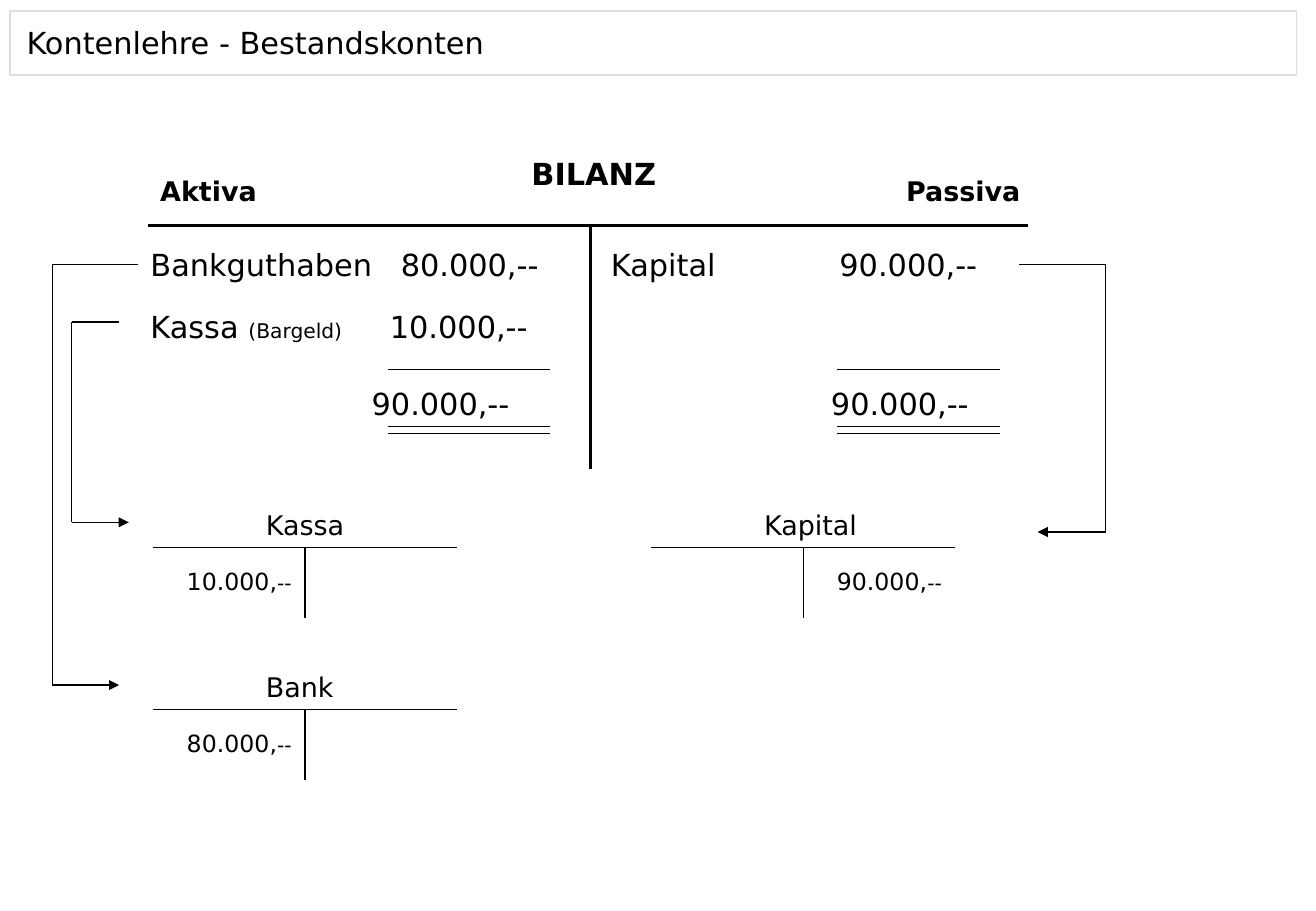
from dataclasses import dataclass

from lxml import etree
from pptx import Presentation
from pptx import util as u
from pptx.dml.color import RGBColor
from pptx.enum import shapes, text
from pptx.oxml import ns

PX = 9144
FONT = "DejaVu Sans"
BLACK, WHITE, GREY = "000000", "FFFFFF", "DDDDDD"
LEFT, CENTER, RIGHT = text.PP_ALIGN.LEFT, text.PP_ALIGN.CENTER, text.PP_ALIGN.RIGHT


@dataclass
class Heading:
    label: str
    x: int
    y: int
    w: int
    size: int
    align: text.PP_ALIGN = LEFT


@dataclass
class Entry:
    pieces: list[tuple[str, int]]
    x: int
    y: int
    h: int
    tab: int


@dataclass
class Account:
    name: str
    amount: str
    x: int
    y: int
    name_w: int
    amount_dx: int


@dataclass
class Route:
    start_x: int
    start_y: int
    turn_x: int
    end_x: int
    end_y: int


HEADINGS = [
    Heading("BILANZ ", 374, 123, 238, 18, CENTER),
    Heading("Aktiva", 122, 139, 112, 16),
    Heading("Passiva", 736, 139, 154, 16),
]
ENTRIES = [
    Entry([("Bankguthaben\t80.000,--", 18)], 114, 198, 51, 206),
    Entry([("Kassa ", 18), ("(Bargeld)", 12), ("\t10.000,--", 18)], 114, 249, 47, 197),
    Entry([("Kapital\t90.000,--", 18)], 493, 198, 51, 188),
    Entry([("\t90.000,--", 18)], 114, 312, 51, 182),
    Entry([("\t90.000,--", 18)], 492, 312, 51, 182),
]
ACCOUNTS = [
    Account("Kassa", "10.000,", 126, 451, 88, 12),
    Account("Bank", "80.000,", 126, 584, 88, 12),
    Account("Kapital", "90.000,", 536, 451, 126, 137),
]
ROUTES = [
    Route(114, 218, 43, 98, 564),
    Route(98, 265, 59, 106, 430),
    Route(839, 218, 910, 854, 438),
]

prs = Presentation()
prs.slide_width, prs.slide_height = 1083 * PX, 750 * PX
s = prs.slides.add_slide(prs.slide_layouts[6])


def rgb(color: str) -> RGBColor:
    return RGBColor.from_string(color)


def write(tf, pieces: list[tuple[str, int]], *, bold: bool = False,
          align: text.PP_ALIGN = LEFT, tab: int = 0) -> None:
    tf.word_wrap = True
    tf.vertical_anchor = text.MSO_ANCHOR.TOP
    p = tf.paragraphs[0]
    p.alignment = align
    if tab:
        tabs = etree.SubElement(p._p.get_or_add_pPr(), ns.qn("a:tabLst"))
        etree.SubElement(tabs, ns.qn("a:tab"), pos=str(tab * PX), algn="l")
    for content, size in pieces:
        r = p.add_run()
        r.text = content
        r.font.name, r.font.size, r.font.bold = FONT, u.Pt(size), bold
        r.font.color.rgb = rgb(BLACK)


def rect(x: int, y: int, w: int, h: int):
    sp = s.shapes.add_shape(shapes.MSO_SHAPE.RECTANGLE, x * PX, y * PX, w * PX, h * PX)
    sp.shadow.inherit = False
    return sp


def label(x: int, y: int, w: int, h: int, pieces: list[tuple[str, int]], **fmt) -> None:
    sp = rect(x, y, w, h)
    sp.fill.solid()
    sp.fill.fore_color.rgb = rgb(WHITE)
    sp.line.fill.background()
    write(sp.text_frame, pieces, **fmt)


def line(x1: int, y1: int, x2: int, y2: int, width: float = 0.75, arrow: bool = False) -> None:
    c = s.shapes.add_connector(shapes.MSO_CONNECTOR.STRAIGHT, x1 * PX, y1 * PX, x2 * PX, y2 * PX)
    c.line.color.rgb = rgb(BLACK)
    c.line.width = u.Pt(width)
    if arrow:
        etree.SubElement(c.line._get_or_add_ln(), ns.qn("a:tailEnd"), type="triangle")
    etree.SubElement(c._element.spPr, ns.qn("a:effectLst"))


def draw_account(a: Account) -> None:
    middle = a.x + 125
    line(a.x, a.y, a.x + 250, a.y)
    line(middle, a.y, middle, a.y + 58)
    label(a.x + 83, a.y - 37, a.name_w, 32, [(a.name, 16)])
    label(a.x + a.amount_dx, a.y + 11, 112, 38, [(a.amount, 14), ("--", 12)], align=RIGHT)


def draw_route(r: Route) -> None:
    line(r.turn_x, r.start_y, r.turn_x, r.end_y)
    line(r.start_x, r.start_y, r.turn_x, r.start_y)
    line(r.turn_x, r.end_y, r.end_x, r.end_y, arrow=True)


line(122, 186, 846, 186, 1.75)
line(486, 186, 486, 386, 1.75)
for h in HEADINGS:
    label(h.x, h.y, h.w, 38, [(h.label, h.size)], bold=True, align=h.align)
for e in ENTRIES:
    label(e.x, e.y, 360, e.h, e.pieces, tab=e.tab)
for x in (319, 689):
    for y in (304, 351, 357):
        line(x, y, x + 134, y)
for account in ACCOUNTS:
    draw_account(account)
for route in ROUTES:
    draw_route(route)

title = s.shapes.add_textbox(12 * PX, 15 * PX, 402 * PX, 40 * PX)
write(title.text_frame, [("Kontenlehre - Bestandskonten", 18)])
frame = rect(8, 9, 1059, 53)
frame.fill.background()
frame.line.color.rgb = rgb(GREY)
frame.line.width = u.Pt(1)

prs.save("out.pptx")
